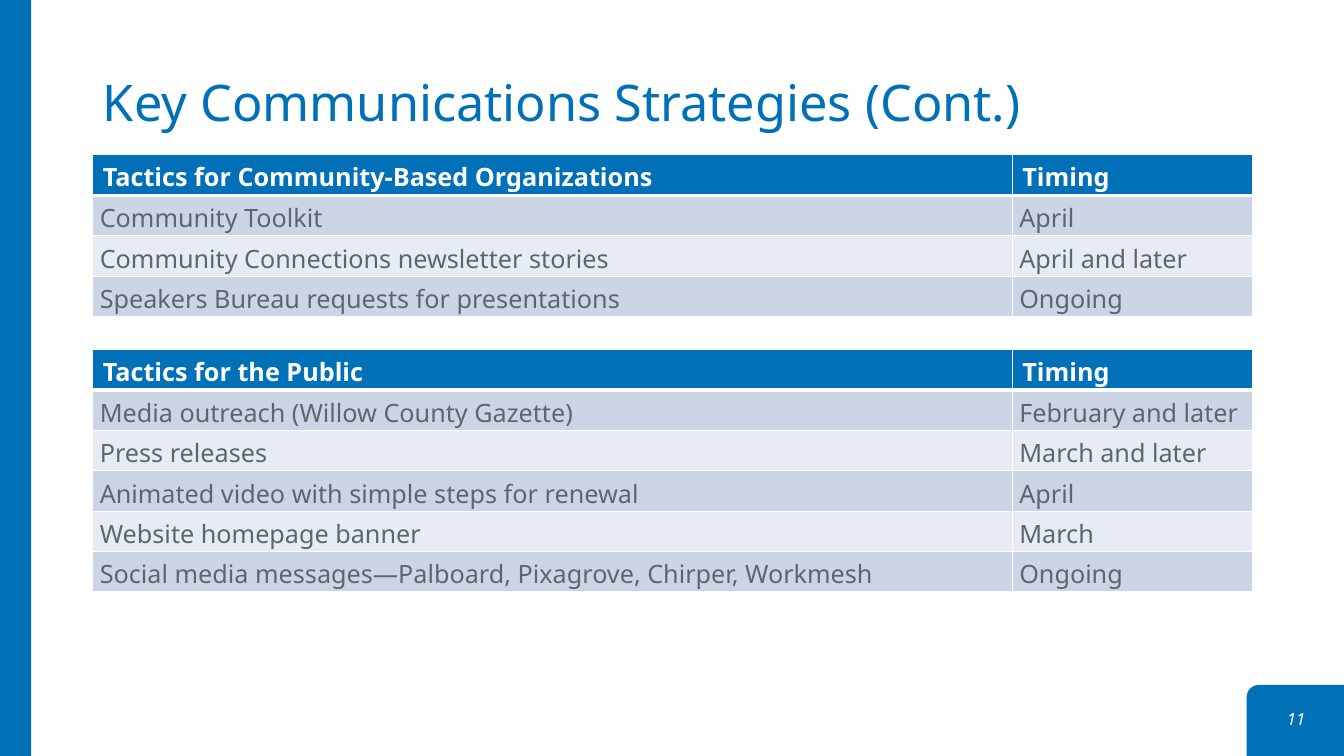
from dataclasses import dataclass

import pptx
import pptx.dml.color
import pptx.enum.shapes
import pptx.enum.text
import pptx.oxml
import pptx.oxml.ns
import pptx.util

Inches = pptx.util.Inches
SHAPE = pptx.enum.shapes.MSO_SHAPE
ALIGN = pptx.enum.text.PP_ALIGN
ANCHOR = pptx.enum.text.MSO_ANCHOR

FONT = "Noto Sans"
BLUE, WHITE, GRAY = "0071B9", "FFFFFF", "5B6770"
BANDS = ("CCD5E6", "E7EBF3")
LEFT, WIDTH = 0.92, 11.5
COLUMNS = (9.12, 2.38)
ROW_HEIGHT = 0.4


@dataclass
class Bar:
    left: float
    top: float
    width: float
    height: float
    kind: int
    rotation: int = 0


@dataclass
class TacticsTable:
    top: float
    height: float
    header_height: float
    audience: str
    tactics: list[tuple[str, str]]


BARS = [
    Bar(12.49, 6.67, 0.72, 0.97, SHAPE.ROUND_1_RECTANGLE, 270),
    Bar(0, 0, 0.31, 7.5, SHAPE.RECTANGLE),
]
TABLES = [
    TacticsTable(1.53, 1.61, 0.41, "Tactics for Community-Based Organizations", [
        ("Community Toolkit", "April"),
        ("Community Connections newsletter stories", "April and later"),
        ("Speakers Bureau requests for presentations", "Ongoing"),
    ]),
    TacticsTable(3.47, 2.4, 0.36, "Tactics for the Public", [
        ("Media outreach (Willow County Gazette)", "February and later"),
        ("Press releases", "March and later"),
        ("Animated video with simple steps for renewal", "April"),
        ("Website homepage banner", "March"),
        ("Social media messages—Palboard, Pixagrove, Chirper, Workmesh", "Ongoing"),
    ]),
]


def rgb(color: str) -> pptx.dml.color.RGBColor:
    return pptx.dml.color.RGBColor.from_string(color)


def write(tf, text: str, size: float = 18, color: str = GRAY, bold: bool = False,
          italic: bool = False, align=ALIGN.LEFT, spacing: float = 1.0) -> None:
    p = tf.paragraphs[0]
    p.alignment, p.line_spacing = align, spacing
    r = p.add_run()
    r.text = text
    r.font.name, r.font.size = FONT, pptx.util.Pt(size)
    r.font.bold, r.font.italic = bold, italic
    r.font.color.rgb = rgb(color)


def add_bar(s, bar: Bar) -> None:
    sp = s.shapes.add_shape(bar.kind, Inches(bar.left), Inches(bar.top),
                            Inches(bar.width), Inches(bar.height))
    sp.rotation = bar.rotation
    sp.shadow.inherit = False
    sp.fill.solid()
    sp.fill.fore_color.rgb = rgb(BLUE)
    sp.line.fill.background()


def set_borders(cell, top: int = 1, bottom: int = 1) -> None:
    """Draw white borders, with widths in points."""
    tcPr = cell._tc.get_or_add_tcPr()
    widths = {"lnL": 1, "lnR": 1, "lnT": top, "lnB": bottom}
    for i, (side, width) in enumerate(widths.items()):
        tcPr.insert(i, pptx.oxml.parse_xml(
            f'<a:{side} {pptx.oxml.ns.nsdecls("a")} w="{pptx.util.Pt(width)}">'
            f'<a:solidFill><a:srgbClr val="{WHITE}"/></a:solidFill></a:{side}>'))


def add_tactics(s, spec_table: TacticsTable) -> None:
    rows = [(spec_table.audience, "Timing"), *spec_table.tactics]
    frame = s.shapes.add_table(len(rows), len(COLUMNS), Inches(LEFT), Inches(spec_table.top),
                               Inches(WIDTH), Inches(spec_table.height))
    table = frame.table
    for column, width in zip(table.columns, COLUMNS):
        column.width = Inches(width)
    for i, texts in enumerate(rows):
        header = i == 0
        table.rows[i].height = Inches(spec_table.header_height if header else ROW_HEIGHT)
        for j, text in enumerate(texts):
            cell = table.cell(i, j)
            cell.fill.solid()
            cell.fill.fore_color.rgb = rgb(BLUE if header else BANDS[(i - 1) % 2])
            set_borders(cell, top=3 if i == 1 else 1, bottom=3 if header else 1)
            if header:
                write(cell.text_frame, text, color=WHITE, bold=True)
            else:
                cell.vertical_anchor = ANCHOR.MIDDLE
                cell.margin_left = cell.margin_right = Inches(0.07)
                cell.margin_top = cell.margin_bottom = 0
                write(cell.text_frame, text, spacing=1.15)
    frame.height = Inches(spec_table.height)


def main() -> None:
    prs = pptx.Presentation()
    prs.slide_width, prs.slide_height = Inches(13.33), Inches(7.5)
    s = prs.slides.add_slide(prs.slide_layouts[5])

    # Side bar and page number tab
    for bar in BARS:
        add_bar(s, bar)
    sp = s.shapes.add_textbox(Inches(12.53), Inches(6.98), Inches(0.65), Inches(0.3))
    sp.text_frame.word_wrap = True
    sp.text_frame.vertical_anchor = ANCHOR.MIDDLE
    write(sp.text_frame, "11", size=12, color=WHITE, italic=True, align=ALIGN.CENTER)

    # Title
    title = s.shapes.title
    title.left, title.top = Inches(LEFT), Inches(0.26)
    title.width, title.height = Inches(WIDTH), Inches(1.1)
    title.text_frame.vertical_anchor = ANCHOR.BOTTOM
    write(title.text_frame, "Key Communications Strategies (Cont.)",
          size=36, color=BLUE, spacing=0.9)

    # Tactics by audience
    for tactics in TABLES:
        add_tactics(s, tactics)

    prs.save("out.pptx")


if __name__ == "__main__":
    main()
